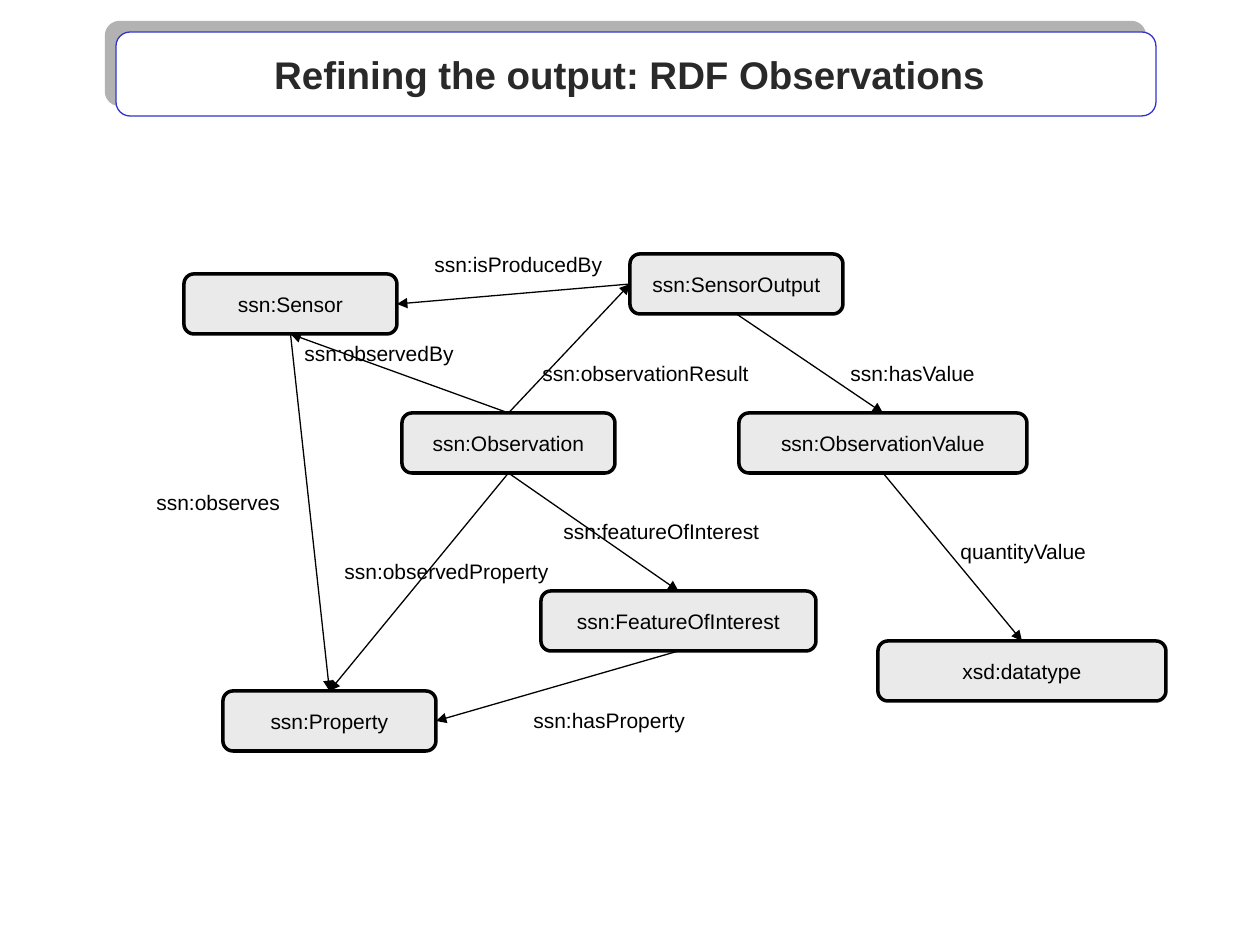
from pptx import Presentation
from pptx.dml.color import RGBColor
from pptx.enum.shapes import MSO_CONNECTOR, MSO_SHAPE
from pptx.enum.text import MSO_ANCHOR, PP_ALIGN
from pptx.oxml import parse_xml
from pptx.oxml.ns import nsdecls
from pptx.util import Pt

PX = 914400 / 126
COLORS = {"white": "FFFFFF", "blue": "3333CC", "shadow": "B2B2B2",
          "title": "292929", "node": "EAEAEA", "black": "000000"}
TOP, LEFT, BOTTOM, RIGHT = range(4)  # connection sites of a rectangle


def px(*values):
    return [round(v * PX) for v in values]


def write(shape, text, size=12, color="black", bold=False,
          align=PP_ALIGN.LEFT, anchor=MSO_ANCHOR.TOP):
    tf = shape.text_frame
    tf.word_wrap = True
    tf.vertical_anchor = anchor
    p = tf.paragraphs[0]
    p.alignment = align
    r = p.add_run()
    r.text = text
    r.font.name = "Arial"
    r.font.size = Pt(size)
    r.font.bold = bold
    r.font.color.rgb = RGBColor.from_string(COLORS[color])


prs = Presentation()
prs.slide_width, prs.slide_height = px(1260, 945)
s = prs.slides.add_slide(prs.slide_layouts[5])

# Title panel with an offset shadow, behind the title
title = s.shapes.title
panel = s.shapes.add_shape(MSO_SHAPE.ROUNDED_RECTANGLE, *px(116, 32, 1040, 84))
panel.fill.solid()
panel.fill.fore_color.rgb = RGBColor.from_string(COLORS["white"])
panel.line.color.rgb = RGBColor.from_string(COLORS["blue"])
panel.line.width = Pt(0.75)
panel._element.spPr.append(parse_xml(
    f'<a:effectLst {nsdecls("a")}><a:outerShdw dist="107950" dir="13500000" '
    f'algn="ctr" rotWithShape="0"><a:srgbClr val="{COLORS["shadow"]}"/>'
    '</a:outerShdw></a:effectLst>'))
title._element.addprevious(panel._element)

title.left, title.top, title.width, title.height = px(136, 32, 998, 84)
write(title, "Refining the output: RDF Observations ", size=22, color="title",
      bold=True, align=PP_ALIGN.CENTER, anchor=MSO_ANCHOR.MIDDLE)

# Classes: left, top, width
classes = {
    "ssn:FeatureOfInterest": (541, 591, 275),
    "ssn:Observation": (402, 413, 213),
    "ssn:SensorOutput": (630, 254, 213),
    "ssn:Sensor": (184, 274, 213),
    "ssn:ObservationValue": (739, 413, 288),
    "ssn:Property": (223, 691, 213),
    "xsd:datatype": (878, 641, 288),
}
nodes = {}
for name, (x, y, w) in classes.items():
    sp = s.shapes.add_shape(MSO_SHAPE.ROUNDED_RECTANGLE, *px(x, y, w, 60))
    sp.shadow.inherit = False
    sp.fill.solid()
    sp.fill.fore_color.rgb = RGBColor.from_string(COLORS["node"])
    sp.line.color.rgb = RGBColor.from_string(COLORS["black"])
    sp.line.width = Pt(2)
    write(sp, name, align=PP_ALIGN.CENTER, anchor=MSO_ANCHOR.MIDDLE)
    nodes[name] = sp

# Properties: source, site, target, site, label, label left, top, width
properties = [
    ("ssn:Observation", TOP, "ssn:SensorOutput", LEFT,
     "ssn:observationResult", 530, 354, 277),
    ("ssn:Observation", TOP, "ssn:Sensor", BOTTOM,
     "ssn:observedBy", 292, 334, 195),
    ("ssn:SensorOutput", LEFT, "ssn:Sensor", RIGHT,
     "ssn:isProducedBy", 422, 245, 208),
    ("ssn:SensorOutput", BOTTOM, "ssn:ObservationValue", TOP,
     "ssn:hasValue", 838, 354, 189),
    ("ssn:Observation", BOTTOM, "ssn:FeatureOfInterest", TOP,
     "ssn:featureOfInterest", 551, 512, 248),
    ("ssn:Observation", BOTTOM, "ssn:Property", TOP,
     "ssn:observedProperty", 332, 552, 258),
    ("ssn:Sensor", BOTTOM, "ssn:Property", TOP,
     "ssn:observes", 144, 483, 175),
    ("ssn:FeatureOfInterest", BOTTOM, "ssn:Property", RIGHT,
     "ssn:hasProperty", 521, 701, 228),
    ("ssn:ObservationValue", BOTTOM, "xsd:datatype", TOP,
     "quantityValue", 948, 532, 198),
]
for source, start, target, end, label, x, y, w in properties:
    cx = s.shapes.add_connector(MSO_CONNECTOR.STRAIGHT, 0, 0, 0, 0)
    cx.begin_connect(nodes[source], start)
    cx.end_connect(nodes[target], end)
    cx.line.color.rgb = RGBColor.from_string(COLORS["black"])
    cx.line.width = Pt(0.75)
    cx.line._get_or_add_ln().append(
        parse_xml(f'<a:tailEnd {nsdecls("a")} type="triangle"/>'))
    cx._element.spPr.append(parse_xml(f'<a:effectLst {nsdecls("a")}/>'))
    write(s.shapes.add_textbox(*px(x, y, w, 38)), label)

prs.save("out.pptx")
